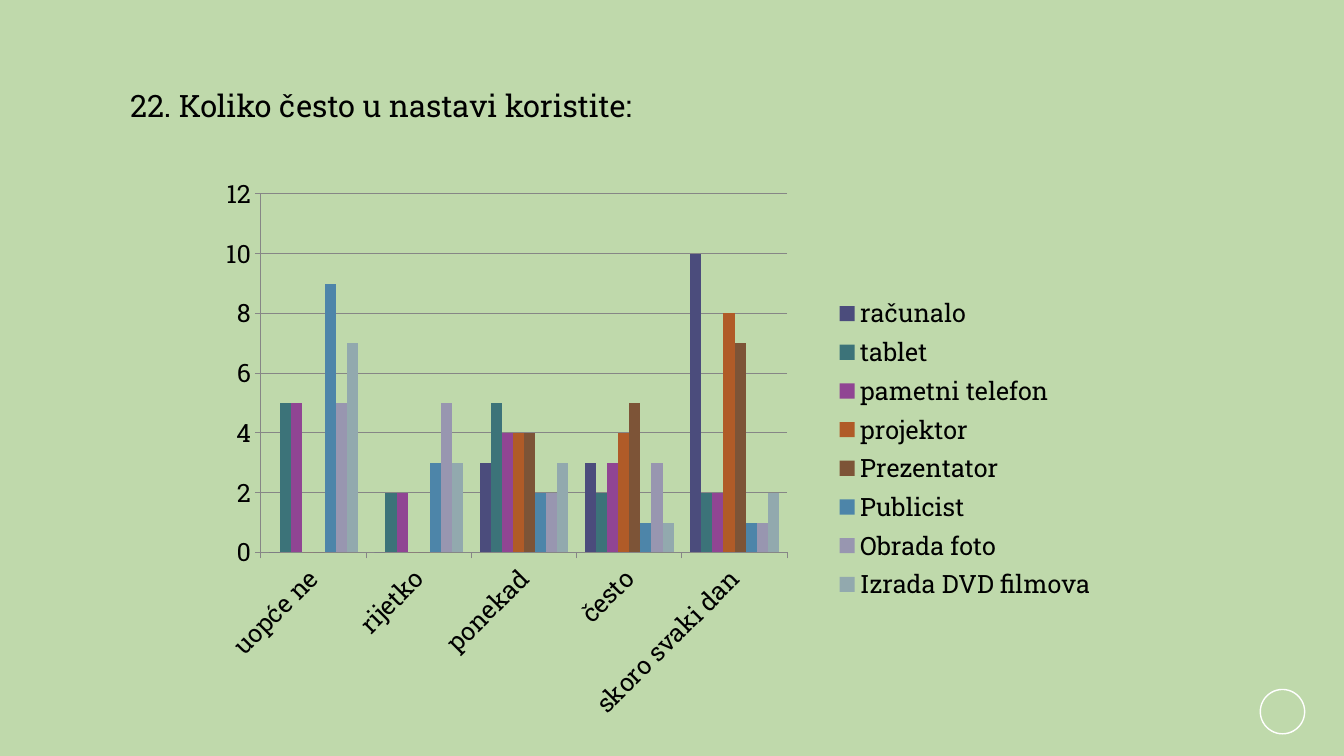
from lxml import etree
from pptx import Presentation
from pptx.chart.data import CategoryChartData
from pptx.dml.color import RGBColor
from pptx.enum.chart import XL_CHART_TYPE, XL_LEGEND_POSITION, XL_TICK_MARK
from pptx.enum.shapes import MSO_SHAPE
from pptx.enum.text import MSO_ANCHOR, MSO_AUTO_SIZE, PP_ALIGN
from pptx.oxml import parse_xml
from pptx.oxml.ns import nsdecls, qn
from pptx.util import Inches, Pt

COLUMN_CLUSTERED = XL_CHART_TYPE.COLUMN_CLUSTERED
LEGEND_RIGHT = XL_LEGEND_POSITION.RIGHT
TICK_OUTSIDE = XL_TICK_MARK.OUTSIDE
OVAL = MSO_SHAPE.OVAL
MIDDLE = MSO_ANCHOR.MIDDLE
GROW = MSO_AUTO_SIZE.SHAPE_TO_FIT_TEXT
LEFT = PP_ALIGN.LEFT

FONT = "Roboto Slab"
GREEN = RGBColor(0xBF, 0xD9, 0xAB)
BLACK = RGBColor(0, 0, 0)
WHITE = RGBColor(0xFF, 0xFF, 0xFF)
AXIS_GREY = RGBColor(0x86, 0x86, 0x86)

WIDTH, HEIGHT = 13.33, 7.5
CATEGORIES = ["uopće ne", "rijetko", "ponekad", "često", "skoro svaki dan"]
# Name, values, fill colour, brightness
SERIES = [
    ("računalo", (0, 0, 3, 3, 10), RGBColor(0x53, 0x54, 0x8A), -0.1),
    ("tablet", (5, 2, 5, 2, 2), RGBColor(0x43, 0x80, 0x86), -0.1),
    ("pametni telefon", (5, 2, 4, 3, 2), RGBColor(0xA0, 0x4D, 0xA3), -0.1),
    ("projektor", (0, 0, 4, 4, 8), RGBColor(0xC4, 0x65, 0x2D), -0.1),
    ("Prezentator", (0, 0, 4, 5, 7), RGBColor(0x8B, 0x5D, 0x3D), -0.1),
    ("Publicist", (9, 3, 2, 1, 1), RGBColor(0x5C, 0x92, 0xB5), -0.1),
    ("Obrada foto", (5, 5, 2, 3, 1), RGBColor(0x98, 0x96, 0xB0), 0),
    ("Izrada DVD filmova", (7, 3, 3, 1, 2), RGBColor(0x92, 0xA9, 0xAE), 0),
]


def box(left, top, width, height):
    return [Inches(value) for value in (left, top, width, height)]


def format_font(font, size, color=BLACK):
    font.name = FONT
    font.size = Pt(size)
    font.bold = False
    font.color.rgb = color


def write_text(shape, text, size, color=BLACK, align=LEFT):
    frame = shape.text_frame
    frame.word_wrap = True
    frame.auto_size = GROW
    frame.vertical_anchor = MIDDLE
    paragraph = frame.paragraphs[0]
    paragraph.text = text
    paragraph.alignment = align
    format_font(paragraph.runs[0].font, size, color)


def add_title(slide, text, area):
    title = slide.shapes.title
    title.left, title.top, title.width, title.height = area
    write_text(title, text, size=22)


def add_ring(slide, area):
    ring = slide.shapes.add_shape(OVAL, *area)
    ring.shadow.inherit = False
    ring.fill.background()
    ring.line.color.rgb = WHITE
    ring.line.width = Pt(1)


def set_plot_layout(chart, **shares):
    """Place the inner plot area by shares of the chart's size."""
    plot_area = chart.element.find(".//" + qn("c:plotArea"))
    old_layout = plot_area.find(qn("c:layout"))
    if old_layout is not None:
        plot_area.remove(old_layout)
    layout = parse_xml(f"<c:layout {nsdecls('c')}><c:manualLayout/></c:layout>")
    settings = {"layoutTarget": "inner", "xMode": "edge", "yMode": "edge", **shares}
    for name, value in settings.items():
        etree.SubElement(layout[0], qn(f"c:{name}")).set("val", str(value))
    plot_area.insert(0, layout)


def format_axis(axis):
    axis.major_tick_mark = TICK_OUTSIDE
    axis.format.line.color.rgb = AXIS_GREY
    format_font(axis.tick_labels.font, 18)


def add_usage_chart(slide, area):
    data = CategoryChartData(number_format="General")
    data.categories = CATEGORIES
    for name, values, _, _ in SERIES:
        data.add_series(name, values)
    chart = slide.shapes.add_chart(COLUMN_CLUSTERED, *area, data).chart
    chart.has_title = False
    format_font(chart.font, 18)

    # Columns
    plot = chart.plots[0]
    plot.gap_width = 150
    plot.vary_by_categories = False
    for series, (_, _, color, brightness) in zip(plot.series, SERIES):
        series.format.fill.solid()
        series.format.fill.fore_color.rgb = color
        series.format.fill.fore_color.brightness = brightness

    # Axes
    format_axis(chart.category_axis)
    labels = chart.category_axis.tick_labels.font
    labels_body = chart.category_axis._element.find(qn("c:txPr")).find(qn("a:bodyPr"))
    labels_body.set("rot", str(-45 * 60000))
    labels.size = Pt(18)
    value_axis = chart.value_axis
    format_axis(value_axis)
    value_axis.minimum_scale, value_axis.maximum_scale = 0, 12
    value_axis.major_unit = 2
    value_axis.has_major_gridlines = True
    value_axis.major_gridlines.format.line.color.rgb = AXIS_GREY

    # Legend and plot area
    chart.has_legend = True
    chart.legend.position = LEGEND_RIGHT
    chart.legend.include_in_layout = False
    format_font(chart.legend.font, 18)
    set_plot_layout(chart, x=0.058, y=0.049, w=0.586, h=0.634)


def main():
    presentation = Presentation()
    presentation.slide_width = Inches(WIDTH)
    presentation.slide_height = Inches(HEIGHT)
    title_only = presentation.slide_layouts[5]
    slide = presentation.slides.add_slide(title_only)
    slide.background.fill.solid()
    slide.background.fill.fore_color.rgb = GREEN

    add_ring(slide, box(12.5, 6.84, 0.44, 0.44))
    add_title(slide, "22. Koliko često u nastavi koristite:", box(1.19, 0.81, 10.95, 0.47))
    add_usage_chart(slide, box(2.07, 1.65, 8.91, 5.61))
    presentation.save("out.pptx")


if __name__ == "__main__":
    main()
